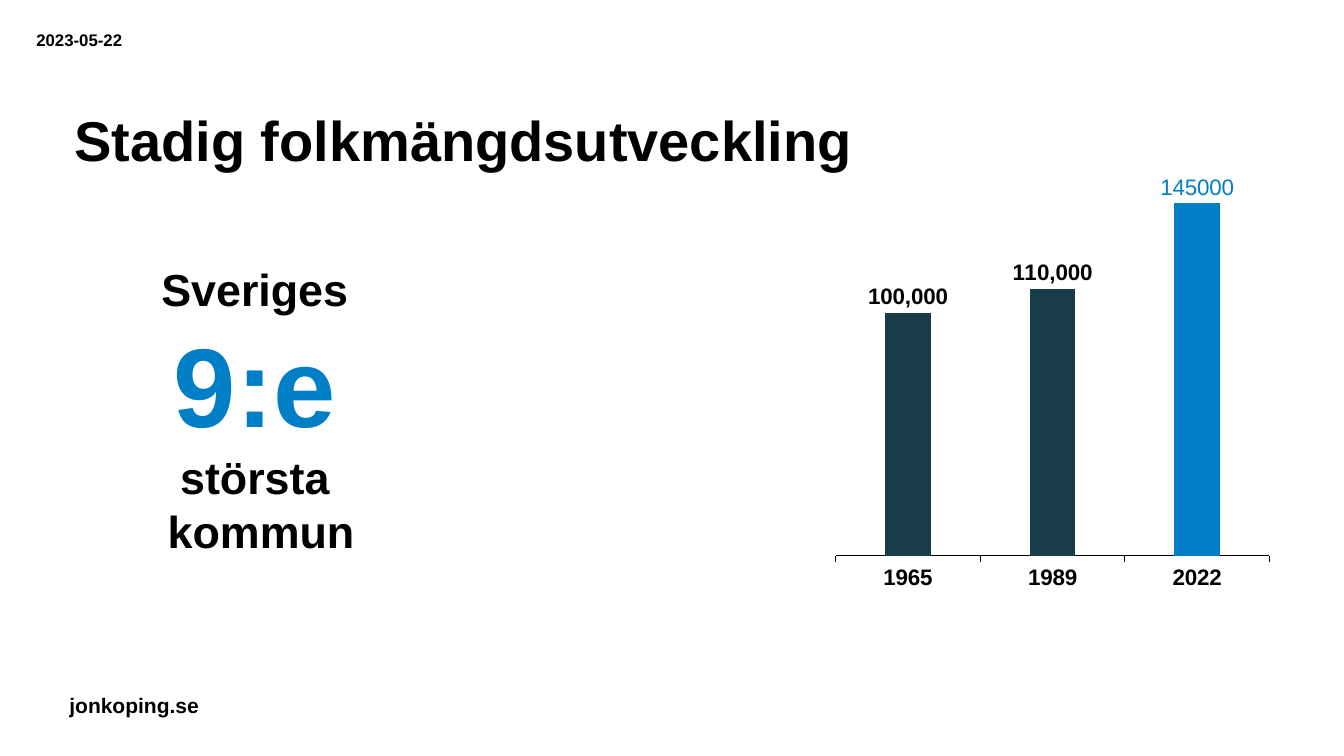
from pptx import Presentation
from pptx.chart.data import CategoryChartData
from pptx.dml.color import RGBColor
from pptx.enum.chart import XL_CHART_TYPE, XL_LABEL_POSITION, XL_TICK_LABEL_POSITION, XL_TICK_MARK
from pptx.enum.text import MSO_ANCHOR, MSO_AUTO_SIZE, PP_ALIGN
from pptx.util import Inches, Pt

FACE, BLACK, BLUE, DARK = "Arial", "000000", "007FC7", "183D49"

deck = Presentation()
deck.slide_width, deck.slide_height = Inches(13.33), Inches(7.5)
slide = deck.slides.add_slide(deck.slide_layouts[6])
CELL = deck.slide_height / 90  # grid of 160 columns by 90 rows


def style(font, size, color=BLACK, bold=True):
    font.name, font.size, font.bold = FACE, Pt(size), bold
    font.color.rgb = RGBColor.from_string(color)


def put(area, paras, wrap=True, pad=True, align=PP_ALIGN.LEFT, anchor=MSO_ANCHOR.TOP, lead=None):
    """Add a text box; each paragraph is a list of (text, size, color), None being a line break."""
    frame = slide.shapes.add_textbox(*[int(n * CELL) for n in area]).text_frame
    frame.word_wrap, frame.vertical_anchor = wrap, anchor
    if not wrap:
        frame.auto_size = MSO_AUTO_SIZE.SHAPE_TO_FIT_TEXT
    if not pad:
        frame.margin_left = frame.margin_right = frame.margin_top = frame.margin_bottom = 0
    for i, runs in enumerate(paras):
        para = frame.add_paragraph() if i else frame.paragraphs[0]
        para.alignment, para.line_spacing = align, lead
        for part in runs:
            if part is None:
                para.add_line_break()
                continue
            text, size, color = part
            run = para.add_run()
            run.text = text
            style(run.font, size, color)


put((7.08, 81.84, 18, 4.2), [[("jonkoping.se", 15, BLACK)]], wrap=False)
put((4.32, 3.6, 11.76, 2.4), [[("2023-05-22", 12, BLACK)]], pad=False)
put((8.88, 6, 142.08, 14.64), [[("Stadig folkmängdsutveckling", 40, BLACK)]],
    pad=False, anchor=MSO_ANCHOR.BOTTOM, lead=0.9)
put((17.88, 30.6, 26.4, 36.72), [
    [("Sveriges ", 32, BLACK)],
    [("9:e", 80, BLUE), (" ", 32, BLACK), None, ("största ", 32, BLACK)],
    [("kommun", 32, BLACK)],
], wrap=False, align=PP_ALIGN.CENTER)

data = CategoryChartData(number_format="#,##0")
data.categories = ["1965", "1989", "2022"]
data.add_series("Series 1", [100000, 110000, 145000])
area = [int(n * CELL) for n in (98.4, 18.84, 53.76, 52.44)]
chart = slide.shapes.add_chart(XL_CHART_TYPE.COLUMN_CLUSTERED, *area, data).chart
chart.has_legend = chart.has_title = False
style(chart.font, 10, bold=False)

years = chart.category_axis
years.major_tick_mark = XL_TICK_MARK.OUTSIDE
years.tick_label_position = XL_TICK_LABEL_POSITION.LOW
years.has_major_gridlines = False
years.format.line.width = Pt(0.75)
years.format.line.color.rgb = RGBColor.from_string(BLACK)
style(years.tick_labels.font, 16)

scale = chart.value_axis
scale.visible = scale.has_major_gridlines = False
scale.minimum_scale, scale.maximum_scale = 0, 160000

plot = chart.plots[0]
plot.gap_width, plot.overlap, plot.vary_by_categories = 219, -27, False
bars = plot.series[0]
for i, color in enumerate([DARK, DARK, BLUE]):
    fill = bars.points[i].format.fill
    fill.solid()
    fill.fore_color.rgb = RGBColor.from_string(color)

tags = bars.data_labels
tags.show_value = True
tags.number_format, tags.number_format_is_linked = "#,##0", False
tags.position = XL_LABEL_POSITION.OUTSIDE_END
style(tags.font, 16)
last = bars.points[2].data_label
run = last.text_frame.paragraphs[0].add_run()
run.text = "145000"
style(run.font, 16, BLUE, bold=False)
last.position = XL_LABEL_POSITION.OUTSIDE_END

deck.save("out.pptx")
